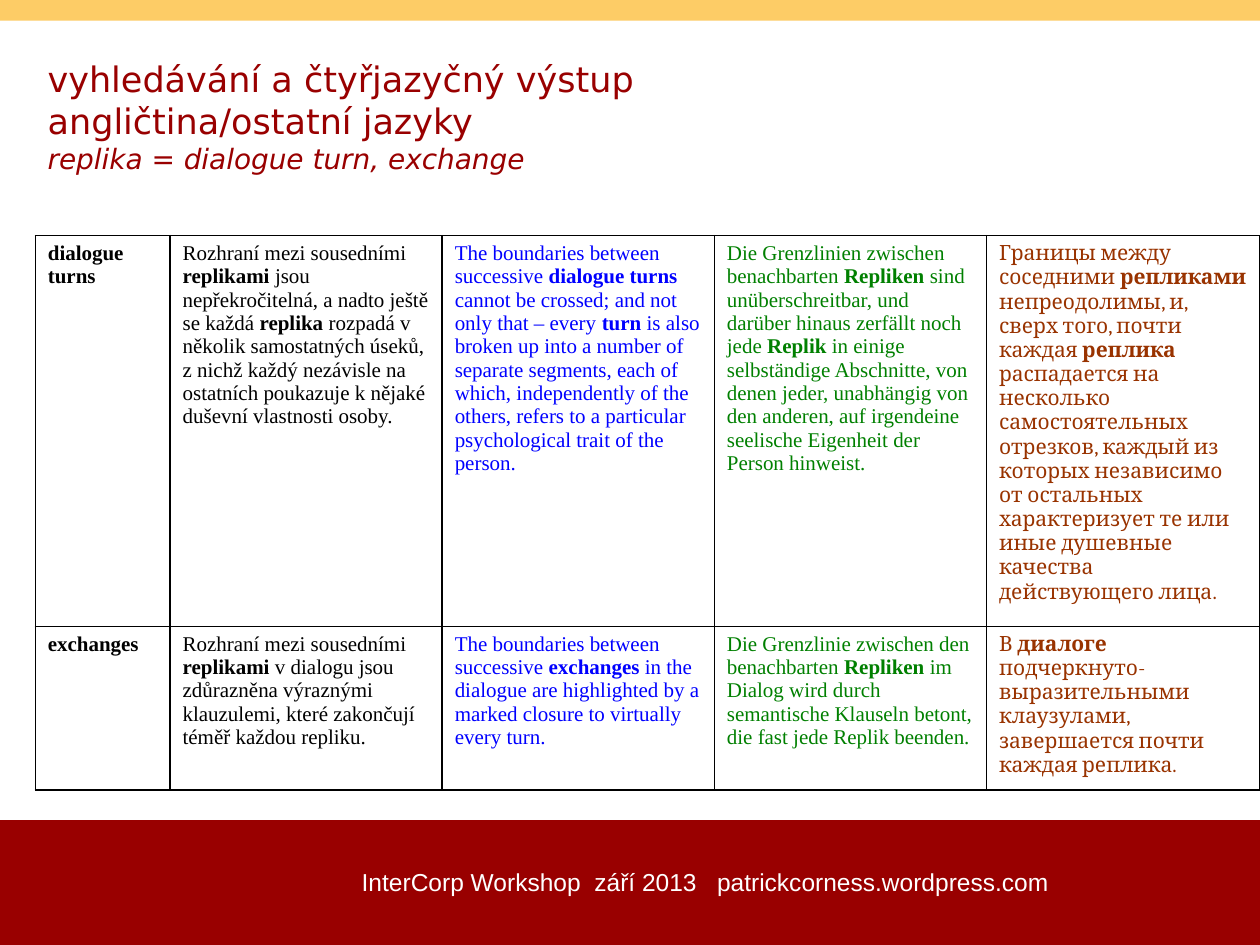
from pptx import Presentation
from pptx.dml.color import RGBColor
from pptx.enum.shapes import MSO_SHAPE
from pptx.enum.text import MSO_ANCHOR, PP_ALIGN
from pptx.oxml import parse_xml
from pptx.oxml.ns import nsdecls
from pptx.util import Inches, Pt

WIDTH, HEIGHT = 10, 7.5
RED, GOLD, WHITE, BLACK = "990000", "FDCC66", "FFFFFF", "000000"
BANDS = [(0.868, 0.132, RED), (0, 0.022, GOLD)]
FOOTER = "InterCorp Workshop  září 2013   patrickcorness.wordpress.com"
HEADING = "vyhledávání a čtyřjazyčný výstup\nangličtina/ostatní jazyky\n"
SUBHEADING = "replika = dialogue turn, exchange"

LEFT, TABLE_TOP = 0.28, 1.87
LANGUAGES = [
    (1.07, "Times New Roman", BLACK),
    (2.16, "Times New Roman", BLACK),
    (2.16, "Times New Roman", "0000FF"),
    (2.16, "Times New Roman", "008000"),
    (2.17, "Cambria", "993300"),
]
EXAMPLES = [
    (3.1, [
        "*dialogue turns*",
        "Rozhraní mezi sousedními *replikami *jsou nepřekročitelná, a nadto ještě se každá "
        "*replika *rozpadá v několik samostatných úseků, z nichž každý nezávisle na ostatních "
        "poukazuje k nějaké duševní vlastnosti osoby.",
        "The boundaries between successive *dialogue turns* cannot be crossed; and not only "
        "that – every *turn* is also broken up into a number of separate segments, each of "
        "which, independently of the others, refers to a particular psychological trait of "
        "the person.",
        "Die Grenzlinien zwischen benachbarten *Repliken* sind unüberschreitbar, und darüber "
        "hinaus zerfällt noch jede *Replik* in einige selbständige Abschnitte, von denen jeder, "
        "unabhängig von den anderen, auf irgendeine seelische Eigenheit der Person hinweist.",
        "Границы между соседними *репликами* непреодолимы, и, сверх того, почти каждая "
        "*реплика* распадается на несколько самостоятельных отрезков, каждый из которых "
        "независимо от остальных характеризует те или иные душевные качества действующего лица.",
    ]),
    (1.3, [
        "*exchanges*",
        "Rozhraní mezi sousedními *replikami* v dialogu jsou zdůrazněna výraznými klauzulemi, "
        "které zakončují téměř každou repliku.",
        "The boundaries between successive *exchanges* in the dialogue are highlighted by a "
        "marked closure to virtually every turn.",
        "Die Grenzlinie zwischen den benachbarten *Repliken* im Dialog wird durch semantische "
        "Klauseln betont, die fast jede Replik beenden.",
        "В *диалоге* подчеркнуто-выразительными клаузулами, завершается почти каждая реплика.",
    ]),
]


def color(value):
    return RGBColor.from_string(value)


def write(paragraph, text, size, font, ink, bold=False, italic=False):
    for number, line in enumerate(text.split("\n")):
        if number:
            paragraph.add_line_break()
        if line:
            run = paragraph.add_run()
            run.text = line
            run.font.size, run.font.name = Pt(size), font
            run.font.bold, run.font.italic = bold, italic
            run.font.color.rgb = color(ink)


def add_band(slide, top, height, fill):
    band = slide.shapes.add_shape(
        MSO_SHAPE.RECTANGLE, 0, Inches(top * HEIGHT), Inches(WIDTH), Inches(height * HEIGHT))
    band.shadow.inherit = False
    band.fill.solid()
    band.fill.fore_color.rgb = color(fill)
    band.line.fill.background()


def add_text_area(slide, *area):
    frame = slide.shapes.add_textbox(*map(Inches, area)).text_frame
    frame.word_wrap = True
    frame.vertical_anchor = MSO_ANCHOR.TOP
    return frame


def add_borders(cell):
    properties = cell._tc.get_or_add_tcPr()
    for position, side in enumerate(("lnL", "lnR", "lnT", "lnB")):
        properties.insert(position, parse_xml(
            f'<a:{side} {nsdecls("a")} w="{Pt(1)}"><a:solidFill>'
            f'<a:srgbClr val="{BLACK}"/></a:solidFill></a:{side}>'))


def add_examples(slide):
    widths = [width for width, _, _ in LANGUAGES]
    heights = [height for height, _ in EXAMPLES]
    table = slide.shapes.add_table(
        len(heights), len(widths), Inches(LEFT), Inches(TABLE_TOP),
        Inches(sum(widths)), Inches(sum(heights))).table
    table.first_row = table.horz_banding = False
    for column, width in zip(table.columns, widths):
        column.width = Inches(width)
    for row, (height, sentences) in zip(table.rows, EXAMPLES):
        row.height = Inches(height)
        for cell, sentence, (_, font, ink) in zip(row.cells, sentences, LANGUAGES):
            cell.fill.background()
            add_borders(cell)
            for number, part in enumerate(sentence.split("*")):
                write(cell.text_frame.paragraphs[0], part, 12, font, ink, bold=number % 2 == 1)


def main():
    """Build the slide of parallel four-language search results."""
    deck = Presentation()
    deck.slide_width, deck.slide_height = Inches(WIDTH), Inches(HEIGHT)
    slide = deck.slides.add_slide(deck.slide_layouts[6])
    for band in BANDS:
        add_band(slide, *band)

    footer = add_text_area(slide, 2.57, 6.83, 6.06, 0.57).paragraphs[0]
    footer.alignment = PP_ALIGN.CENTER
    write(footer, FOOTER, 14, "Arial", WHITE)

    title = add_text_area(slide, LEFT, 0.4, 9.37, 1.05)
    title.vertical_anchor = MSO_ANCHOR.MIDDLE
    write(title.paragraphs[0], HEADING, 20, "DejaVu Sans", RED)
    write(title.paragraphs[0], SUBHEADING, 16, "DejaVu Sans", RED, italic=True)

    add_examples(slide)
    deck.save("out.pptx")


if __name__ == "__main__":
    main()
